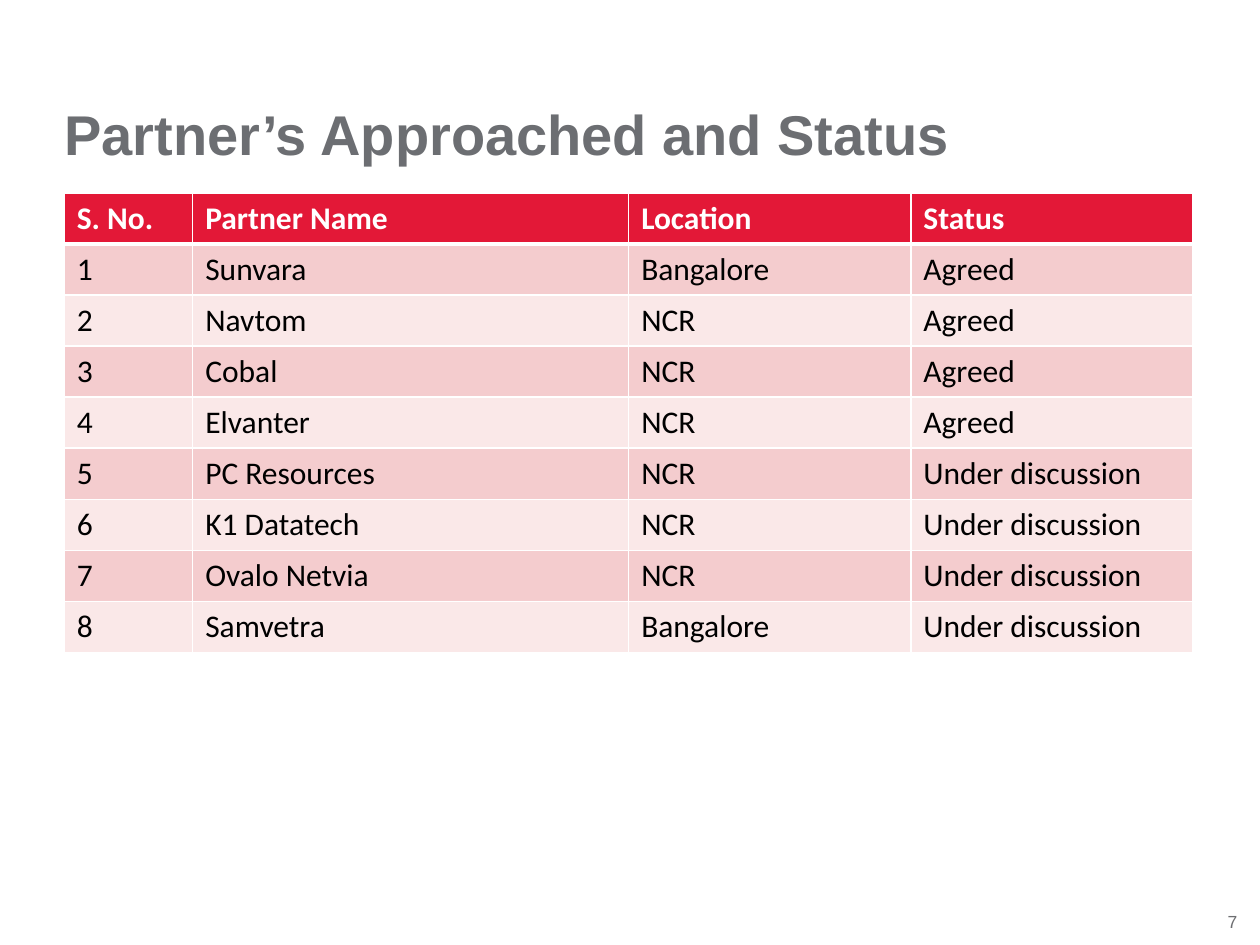
import pptx
import pptx.util
import pptx.dml.color
import pptx.enum.text
import pptx.oxml.ns
from lxml import etree

COLORS = {
    "title": "6C6E72",
    "page": "6D6E71",
    "header": "E31837",
    "header_text": "FFFFFF",
    "body_text": "000000",
    "odd_row": "F4CCCE",
    "even_row": "FAE8E8",
    "border": "FFFFFF",
}
TITLE = "Partner’s Approached and Status"
PAGE_NUMBER = "7"
HEADINGS = ("S. No.", "Partner Name", "Location", "Status")
PARTNERS = [
    ("Sunvara", "Bangalore", "Agreed"),
    ("Navtom", "NCR", "Agreed"),
    ("Cobal", "NCR", "Agreed"),
    ("Elvanter", "NCR", "Agreed"),
    ("PC Resources", "NCR", "Under discussion"),
    ("K1 Datatech", "NCR", "Under discussion"),
    ("Ovalo Netvia", "NCR", "Under discussion"),
    ("Samvetra", "Bangalore", "Under discussion"),
]
SLIDE_SIZE = (10, 7.5)
MARGIN = 0.51
COLUMN_WIDTHS = (1.02, 3.46, 2.24, 2.24)
TABLE_TOP = 1.53
TABLE_HEIGHT = 3.65


def inches(*values):
    return [pptx.util.Inches(value) for value in values]


def rgb(name):
    return pptx.dml.color.RGBColor.from_string(COLORS[name])


def style(paragraph, face, size, color, bold=False):
    paragraph.font.name = face
    paragraph.font.size = pptx.util.Pt(size)
    paragraph.font.bold = bold
    paragraph.font.color.rgb = rgb(color)


def clear_insets(frame):
    frame.margin_left = frame.margin_top = 0
    frame.margin_right = frame.margin_bottom = 0


def add_border(cell, side, points):
    qn = pptx.oxml.ns.qn
    line = etree.Element(qn(f"a:{side}"), w=str(pptx.util.Pt(points)))
    fill = etree.SubElement(line, qn("a:solidFill"))
    etree.SubElement(fill, qn("a:srgbClr"), val=COLORS["border"])
    return line


def style_cell(cell, row):
    header = row == 0
    band = "header" if header else "odd_row" if row % 2 else "even_row"
    text_color = "header_text" if header else "body_text"
    style(cell.text_frame.paragraphs[0], "Calibri", 18, text_color, header)
    cell.fill.solid()
    cell.fill.fore_color.rgb = rgb(band)
    widths = {"lnL": 1, "lnR": 1, "lnT": 3 if row == 1 else 1, "lnB": 3 if header else 1}
    properties = cell._tc.get_or_add_tcPr()
    for position, (side, points) in enumerate(widths.items()):
        properties.insert(position, add_border(cell, side, points))


def add_title(slide):
    title = slide.shapes.title
    title.left, title.top, title.width, title.height = inches(
        MARGIN, 0.78, sum(COLUMN_WIDTHS), 0.54)
    frame = title.text_frame
    frame.text = TITLE
    clear_insets(frame)
    frame.auto_size = pptx.enum.text.MSO_AUTO_SIZE.NONE
    frame.vertical_anchor = pptx.enum.text.MSO_ANCHOR.BOTTOM
    frame.paragraphs[0].alignment = pptx.enum.text.PP_ALIGN.LEFT
    style(frame.paragraphs[0], "Arial", 32, "title", True)


def add_partners(slide):
    records = [HEADINGS] + [
        (str(number), *partner) for number, partner in enumerate(PARTNERS, 1)]
    partners = slide.shapes.add_table(
        len(records), len(HEADINGS),
        *inches(MARGIN, TABLE_TOP, sum(COLUMN_WIDTHS), TABLE_HEIGHT)).table
    for column, width in zip(partners.columns, COLUMN_WIDTHS):
        column.width = pptx.util.Inches(width)
    for row, record in enumerate(records):
        for column, text in enumerate(record):
            cell = partners.cell(row, column)
            cell.text = text
            style_cell(cell, row)


def add_page_number(slide):
    frame = slide.shapes.add_textbox(*inches(9.65, 7.23, 0.17, 0.17)).text_frame
    frame.text = PAGE_NUMBER
    clear_insets(frame)
    frame.word_wrap = False
    frame.vertical_anchor = pptx.enum.text.MSO_ANCHOR.MIDDLE
    frame.paragraphs[0].alignment = pptx.enum.text.PP_ALIGN.RIGHT
    style(frame.paragraphs[0], "Arial", 10, "page")


def main():
    deck = pptx.Presentation()
    deck.slide_width, deck.slide_height = inches(*SLIDE_SIZE)
    slide = deck.slides.add_slide(deck.slide_layouts.get_by_name("Title Only"))
    add_page_number(slide)
    add_title(slide)
    add_partners(slide)
    deck.save("out.pptx")


if __name__ == "__main__":
    main()
